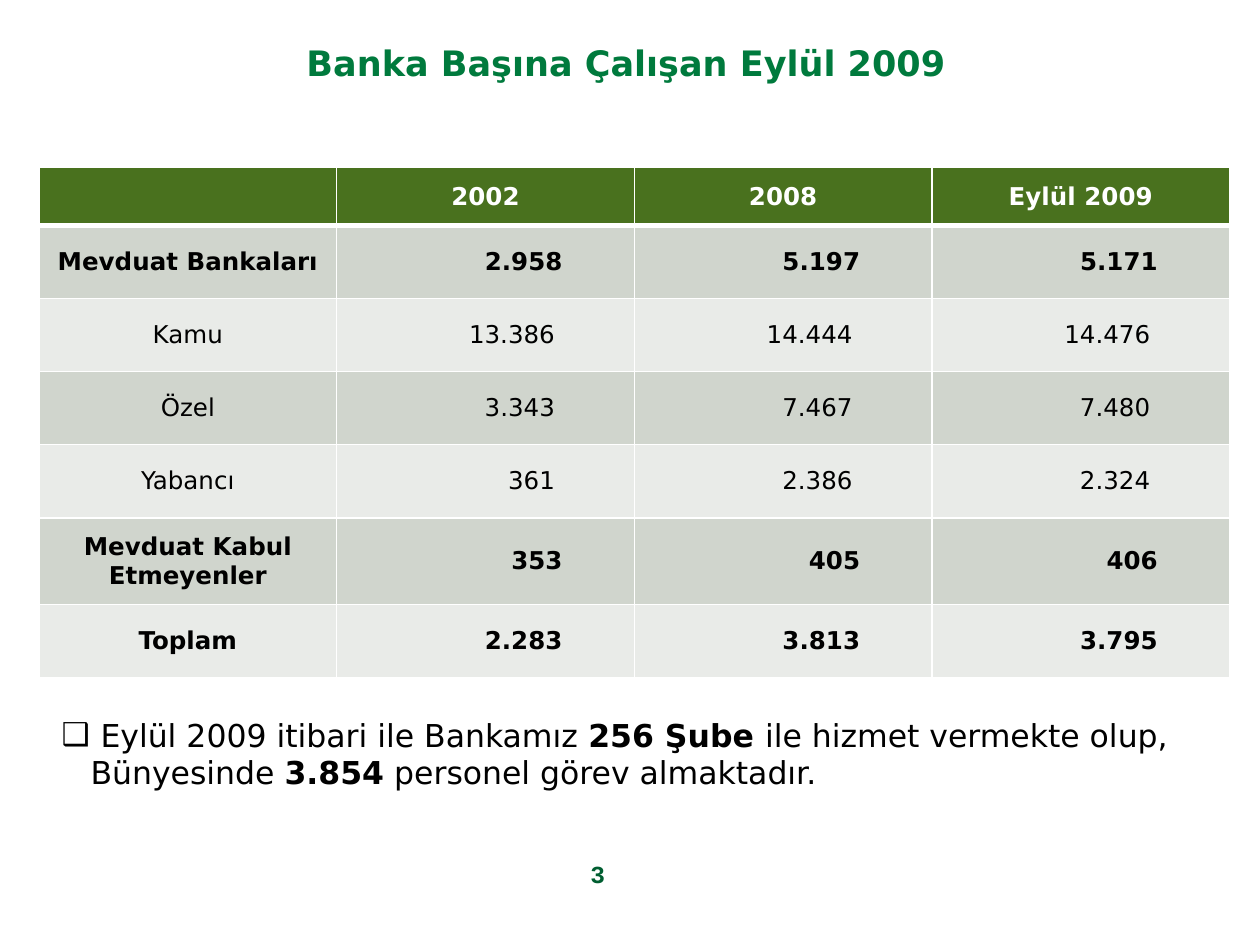
from lxml.etree import SubElement as Sub
from pptx import Presentation
from pptx.dml.color import RGBColor as Rgb
from pptx.enum.text import MSO_ANCHOR as Anchor, MSO_AUTO_SIZE as Auto, PP_ALIGN as Align
from pptx.oxml.ns import qn
from pptx.util import Inches, Pt

TITLE = "Banka Başına Çalışan Eylül 2009"
PAGE = "3"
HEAD = ["", "2002", "2008", "Eylül 2009"]
ROWS = [
    ("Mevduat Bankaları", "2.958", "5.197", "5.171"),
    ("Kamu", "13.386", "14.444", "14.476"),
    ("Özel", "3.343", "7.467", "7.480"),
    ("Yabancı", "361", "2.386", "2.324"),
    ("Mevduat Kabul Etmeyenler", "353", "405", "406"),
    ("Toplam", "2.283", "3.813", "3.795"),
]
STRONG = {"Mevduat Bankaları", "Mevduat Kabul Etmeyenler", "Toplam"}
NOTE = [
    (" Eylül 2009 itibari ile Bankamız ", False),
    ("256 Şube ", True),
    ("ile hizmet vermekte olup, Bünyesinde ", False),
    ("3.854", True),
    (" personel görev almaktadır.", False),
]
HUES = {
    "title": "007A3D", "page": "005E31", "head": "49711E",
    "dark": "D0D5CD", "light": "E9EBE8", "white": "FFFFFF", "black": "000000",
}
HIGH = [0.46, 0.58, 0.58, 0.58, 0.58, 0.69, 0.58]
WIDE = 9.45
SANS = "DejaVu Sans"


def hue(name):
    return Rgb.from_string(HUES[name])


def add_run(para, text, size, color, bold, face=SANS):
    run = para.add_run()
    run.text = text
    font = run.font
    font.name, font.size, font.bold = face, Pt(size), bold
    font.color.rgb = hue(color)


def add_box(slide, *area):
    frame = slide.shapes.add_textbox(*map(Inches, area)).text_frame
    frame.word_wrap = True
    return frame


def add_edges(cell, row):
    props = cell._tc.get_or_add_tcPr()
    for side in "LRTB":
        thick = (row, side) in ((0, "B"), (1, "T"))
        line = Sub(props, qn("a:ln" + side), w=str(Pt(3 if thick else 1)))
        fill = Sub(line, qn("a:solidFill"))
        Sub(fill, qn("a:srgbClr"), val=HUES["white"])


def fill_cell(cell, row, col, text, bold):
    add_edges(cell, row)
    cell.fill.solid()
    cell.fill.fore_color.rgb = hue("head" if row == 0 else "dark" if row % 2 else "light")
    cell.margin_left = cell.margin_right = cell.margin_top = cell.margin_bottom = 0
    cell.vertical_anchor = Anchor.MIDDLE
    para = cell.text_frame.paragraphs[0]
    para.alignment = Align.CENTER
    if row and col:
        para.alignment = Align.RIGHT
        cell.margin_right = Inches(0.57 if bold else 0.63)
    if text:
        add_run(para, text, 14, "black" if row else "white", bold)


def add_grid(slide):
    area = map(Inches, (0.31, 1.33, WIDE, sum(HIGH)))
    table = slide.shapes.add_table(len(HIGH), len(HEAD), *area).table
    for col in table.columns:
        col.width = Inches(WIDE / len(HEAD))
    for row, texts in enumerate([HEAD, *ROWS]):
        table.rows[row].height = Inches(HIGH[row])
        bold = row == 0 or texts[0] in STRONG
        for col, text in enumerate(texts):
            fill_cell(table.cell(row, col), row, col, text, bold)


def add_note(slide):
    frame = add_box(slide, 0.39, 5.63, 9.22, 0.71)
    frame.auto_size = Auto.SHAPE_TO_FIT_TEXT
    para = frame.paragraphs[0]
    props = para._p.get_or_add_pPr()
    props.set("marL", str(Inches(0.23)))
    props.set("indent", str(-Inches(0.23)))
    Sub(props, qn("a:buFont"), typeface=SANS)
    Sub(props, qn("a:buChar"), char="❑")
    for text, bold in NOTE:
        add_run(para, text, 18, "black", bold)


def main():
    deck = Presentation()
    deck.slide_width, deck.slide_height = Inches(10), Inches(7.5)
    slide = deck.slides.add_slide(deck.slide_layouts[6])

    frame = add_box(slide, 0.47, 0.16, 9, 0.67)
    frame.vertical_anchor = Anchor.MIDDLE
    para = frame.paragraphs[0]
    para.alignment = Align.CENTER
    add_run(para, TITLE, 20, "title", True)

    para = add_box(slide, 3.58, 6.82, 2.33, 0.52).paragraphs[0]
    para.alignment = Align.CENTER
    para.line_spacing = 0.76
    add_run(para, PAGE, 14, "page", True, "Courier New")

    add_grid(slide)
    add_note(slide)
    deck.save("out.pptx")


if __name__ == "__main__":
    main()
